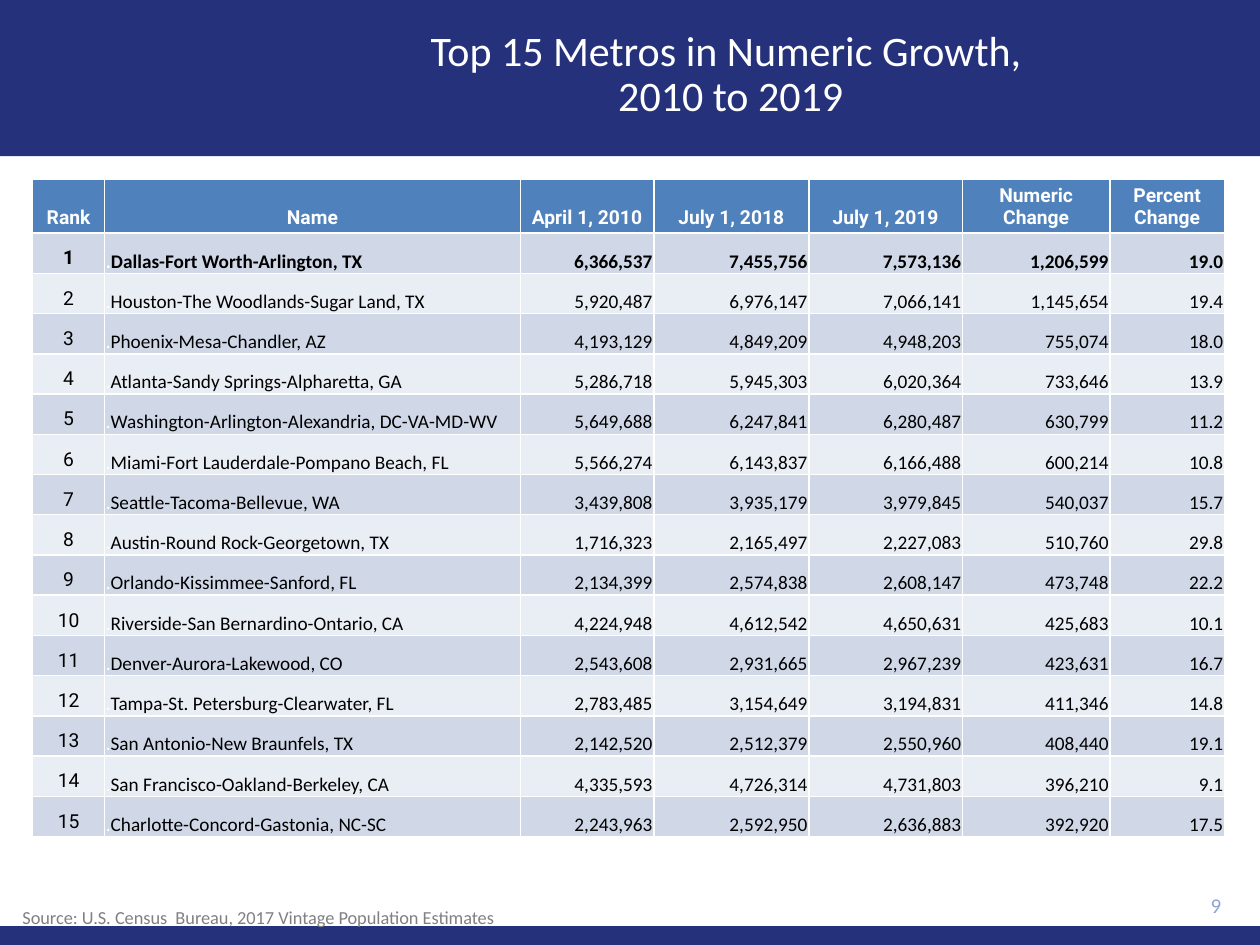
"""Build a slide ranking the fifteen metros with the largest numeric growth."""
from pptx import Presentation
from pptx.dml.color import RGBColor
from pptx.enum.shapes import MSO_SHAPE
from pptx.enum.text import MSO_ANCHOR, PP_ALIGN
from pptx.util import Inches, Pt

TITLE = "Top 15 Metros in Numeric Growth, \v2010 to 2019"
SOURCE = "Source: U.S. Census  Bureau, 2017 Vintage Population Estimates"
PAGE = "9"
HEADS = ["Rank", "Name", "April 1, 2010", "July 1, 2018", "July 1, 2019",
         "Numeric Change", "Percent Change"]
METROS = [
    ("Dallas-Fort Worth-Arlington, TX", "6,366,537", "7,455,756", "7,573,136", "1,206,599", "19.0"),
    ("Houston-The Woodlands-Sugar Land, TX", "5,920,487", "6,976,147", "7,066,141", "1,145,654", "19.4"),
    ("Phoenix-Mesa-Chandler, AZ", "4,193,129", "4,849,209", "4,948,203", "755,074", "18.0"),
    ("Atlanta-Sandy Springs-Alpharetta, GA", "5,286,718", "5,945,303", "6,020,364", "733,646", "13.9"),
    ("Washington-Arlington-Alexandria, DC-VA-MD-WV", "5,649,688", "6,247,841", "6,280,487", "630,799", "11.2"),
    ("Miami-Fort Lauderdale-Pompano Beach, FL", "5,566,274", "6,143,837", "6,166,488", "600,214", "10.8"),
    ("Seattle-Tacoma-Bellevue, WA", "3,439,808", "3,935,179", "3,979,845", "540,037", "15.7"),
    ("Austin-Round Rock-Georgetown, TX", "1,716,323", "2,165,497", "2,227,083", "510,760", "29.8"),
    ("Orlando-Kissimmee-Sanford, FL", "2,134,399", "2,574,838", "2,608,147", "473,748", "22.2"),
    ("Riverside-San Bernardino-Ontario, CA", "4,224,948", "4,612,542", "4,650,631", "425,683", "10.1"),
    ("Denver-Aurora-Lakewood, CO", "2,543,608", "2,931,665", "2,967,239", "423,631", "16.7"),
    ("Tampa-St. Petersburg-Clearwater, FL", "2,783,485", "3,154,649", "3,194,831", "411,346", "14.8"),
    ("San Antonio-New Braunfels, TX", "2,142,520", "2,512,379", "2,550,960", "408,440", "19.1"),
    ("San Francisco-Oakland-Berkeley, CA", "4,335,593", "4,726,314", "4,731,803", "396,210", "9.1"),
    ("Charlotte-Concord-Gastonia, NC-SC", "2,243,963", "2,592,950", "2,636,883", "392,920", "17.5"),
]
THEME = {
    "navy": "25327B", "head": "4F81BD", "bands": ("D0D8E8", "E9EDF4"),
    "white": "FFFFFF", "black": "000000", "grey": "808080", "pale": "8FA5D1",
    "body": "Calibri", "label": "Roboto",
    "title": 24, "cell": 11, "page": 12, "source": 10.5,
}
BARS = [(0, 0, 10, 1.24), (0, 7.35, 10, 0.15)]
WIDTHS = [0.57, 3.3, 1.06, 1.23, 1.22, 1.17, 0.91]
LEFT, TOP, HIGH, HEAD = 0.26, 1.42, 5.22, 0.43
WIDE_PAD = (0.07, 0.03, 0.07, 0.03)
SLIM_PAD = (0.01, 0.01, 0.01, 0)
SIDES = ("margin_left", "margin_top", "margin_right", "margin_bottom")


def assign(item, values):
    """Set each named attribute on the item."""
    for name, value in values.items():
        setattr(item, name, value)


def inches(values):
    """Turn plain numbers into lengths."""
    return [Inches(value) for value in values]


def style(part, size, color, face="body", bold=False):
    """Format the font of a run or paragraph."""
    assign(part.font, {"size": Pt(THEME[size]), "name": THEME[face], "bold": bold})
    part.font.color.rgb = RGBColor.from_string(THEME[color])


def paint(fill, color):
    """Give a solid fill."""
    fill.solid()
    fill.fore_color.rgb = RGBColor.from_string(color)


def write(frame, text, look, layout, anchor=MSO_ANCHOR.TOP):
    """Fill a text frame with one styled paragraph."""
    assign(frame, {"text": text, "word_wrap": True, "vertical_anchor": anchor})
    para = frame.paragraphs[0]
    assign(para, layout)
    for run in para.runs:
        style(run, *look)


def draw_bars(slide):
    """Place the navy bars behind everything else."""
    for spot, box in enumerate(BARS, 2):
        bar = slide.shapes.add_shape(MSO_SHAPE.RECTANGLE, *inches(box))
        bar.shadow.inherit = False
        paint(bar.fill, THEME["navy"])
        bar.line.fill.background()
        slide.shapes._spTree.insert(spot, bar._element)


def fill_cell(cell, row, col, text):
    """Write and format one table cell."""
    pad = WIDE_PAD if row == 0 or col == 0 else SLIM_PAD
    assign(cell, dict(zip(SIDES, inches(pad)), vertical_anchor=MSO_ANCHOR.BOTTOM))
    paint(cell.fill, THEME["bands"][(row - 1) % 2] if row else THEME["head"])
    para = cell.text_frame.paragraphs[0]
    if pad == WIDE_PAD:
        para.alignment = PP_ALIGN.CENTER
    else:
        para.alignment = PP_ALIGN.LEFT if col == 1 else PP_ALIGN.RIGHT
    face = "label" if pad == WIDE_PAD else "body"
    color = "black" if row else "white"
    pieces = [(text, color)]
    if row and col == 1:
        pieces.insert(0, (".", "white"))
    for words, tint in pieces:
        run = para.add_run()
        run.text = words
        style(run, "cell", tint, face, row < 2)


def draw_table(slide):
    """Add the ranking table."""
    rows = [HEADS] + [(str(rank), *metro) for rank, metro in enumerate(METROS, 1)]
    box = inches((LEFT, TOP, sum(WIDTHS), HIGH))
    table = slide.shapes.add_table(len(rows), len(HEADS), *box).table
    for column, width in zip(table.columns, WIDTHS):
        column.width = Inches(width)
    for row, values in enumerate(rows):
        table.rows[row].height = Inches((HIGH - HEAD) / len(METROS) if row else HEAD)
        for col, text in enumerate(values):
            fill_cell(table.cell(row, col), row, col, text)


def main():
    """Assemble and save the slide."""
    deck = Presentation()
    assign(deck, {"slide_width": Inches(10), "slide_height": Inches(7.5)})
    slide = deck.slides.add_slide(deck.slide_layouts[5])
    draw_bars(slide)
    title = slide.shapes.title
    assign(title, dict(zip(("left", "top", "width", "height"), inches((1.7, 0.1, 8.2, 1)))))
    write(title.text_frame, TITLE, ("title", "white"),
          {"alignment": PP_ALIGN.CENTER, "line_spacing": 0.9}, MSO_ANCHOR.MIDDLE)
    draw_table(slide)
    page = slide.shapes.add_textbox(*inches((8.9, 7.01, 0.89, 0.34)))
    write(page.text_frame, PAGE, ("page", "pale"),
          {"alignment": PP_ALIGN.RIGHT}, MSO_ANCHOR.MIDDLE)
    source = slide.shapes.add_textbox(*inches((0.08, 7.13, 5, 0.29)))
    write(source.text_frame, SOURCE, ("source", "grey"), {"line_spacing": 1.07})
    deck.save("out.pptx")


if __name__ == "__main__":
    main()
